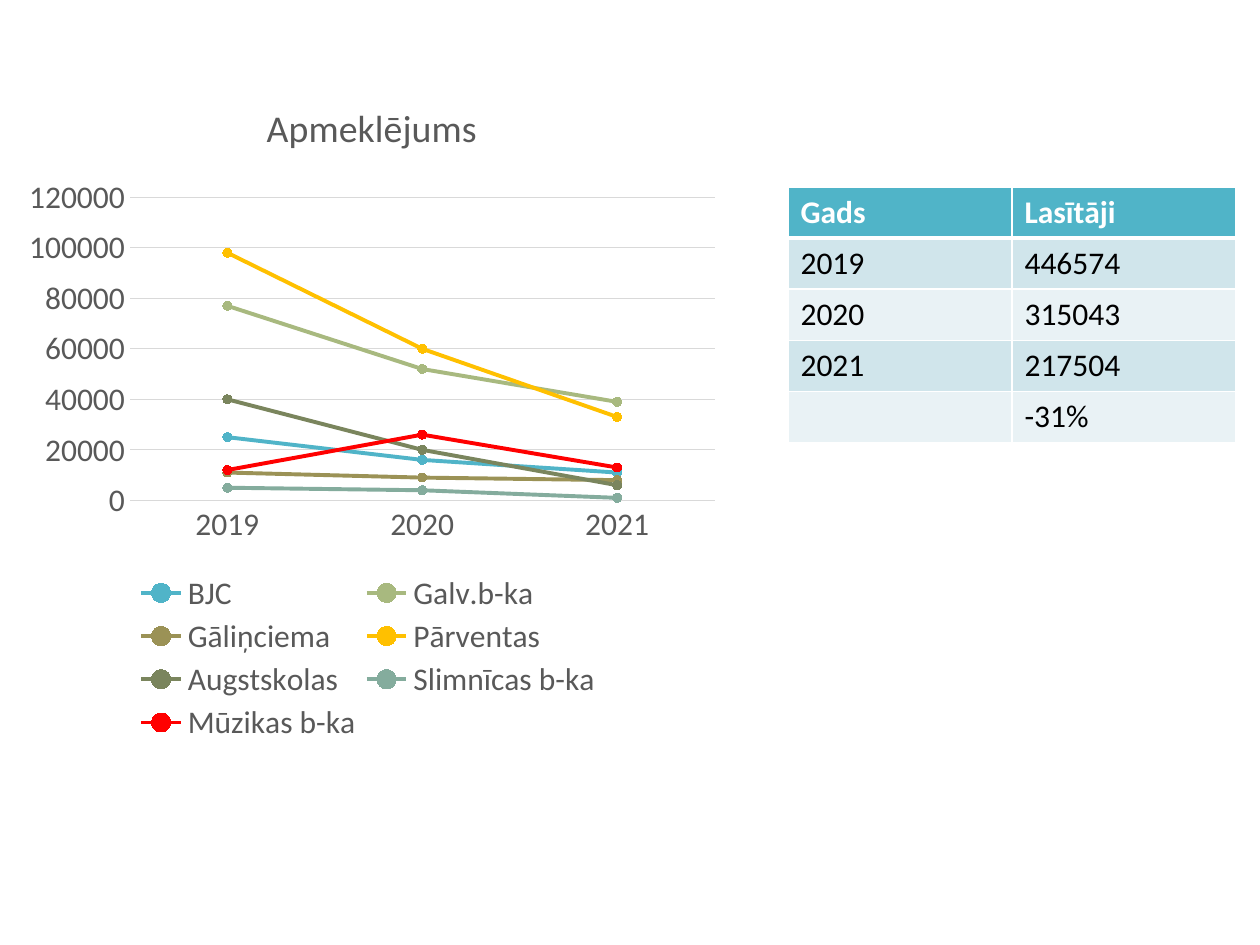
import pptx
import pptx.util
import pptx.chart.data
import pptx.dml.color
import pptx.enum.chart
import pptx.oxml
import pptx.oxml.ns

RGB = pptx.dml.color.RGBColor
WHITE = RGB(0xFF, 0xFF, 0xFF)
BLACK = RGB(0, 0, 0)
GREY = RGB(0x59, 0x59, 0x59)
GRID = RGB(0xD9, 0xD9, 0xD9)
TEAL = RGB(0x50, 0xB4, 0xC8)
BANDS = [RGB(0xD0, 0xE5, 0xEB), RGB(0xE9, 0xF2, 0xF5)]
FONT = "Calibri"

READERS = [
    ("Gads", "Lasītāji"),
    ("2019", "446574"),
    ("2020", "315043"),
    ("2021", "217504"),
    ("", "-31%"),
]
YEARS = ["2019", "2020", "2021"]
VISITS = [
    ("BJC", (25000, 16000, 11000), TEAL),
    ("Galv.b-ka", (77000, 52000, 39000), RGB(0xA8, 0xB9, 0x7F)),
    ("Gāliņciema", (11000, 9000, 8000), RGB(0x9B, 0x92, 0x56)),
    ("Pārventas", (98000, 60000, 33000), RGB(0xFF, 0xC0, 0x00)),
    ("Augstskolas", (40000, 20000, 6000), RGB(0x7A, 0x85, 0x5D)),
    ("Slimnīcas b-ka", (5000, 4000, 1000), RGB(0x84, 0xAC, 0x9D)),
    ("Mūzikas b-ka", (12000, 26000, 13000), RGB(0xFF, 0x00, 0x00)),
]

CHART_BOX = (15, 74, 714, 677)
PLOT_BOX = (130, 197, 585, 303)
LEGEND_BOX = (130, 569, 476, 178)
TABLE_BOX = (788, 187, 448, 255)


def px(length):
    return pptx.util.Emu(round(length * 914400 / 126))


def write(frame, text, size=18, color=BLACK, bold=False):
    run = frame.paragraphs[0].add_run()
    run.text = text
    run.font.name = FONT
    run.font.size = pptx.util.Pt(size)
    run.font.bold = bold
    run.font.color.rgb = color


def draw_borders(cell, bottom):
    properties = cell._tc.get_or_add_tcPr()
    for index, (side, width) in enumerate([("L", 1), ("R", 1), ("T", 1), ("B", bottom)]):
        border = pptx.oxml.parse_xml(
            f'<a:ln{side} {pptx.oxml.ns.nsdecls("a")} w="{pptx.util.Pt(width)}">'
            f'<a:solidFill><a:srgbClr val="{WHITE}"/></a:solidFill></a:ln{side}>')
        properties.insert(index, border)


def manual_layout(box, target=""):
    left, top, width, height = CHART_BOX
    shares = {"x": (box[0] - left) / width, "y": (box[1] - top) / height,
              "w": box[2] / width, "h": box[3] / height}
    values = "".join(f'<c:{key} val="{share:.3f}"/>' for key, share in shares.items())
    return pptx.oxml.parse_xml(
        f'<c:layout {pptx.oxml.ns.nsdecls("c")}><c:manualLayout>{target}'
        f'<c:xMode val="edge"/><c:yMode val="edge"/>{values}</c:manualLayout></c:layout>')


def add_visits(slide):
    data = pptx.chart.data.CategoryChartData()
    data.categories = YEARS
    for name, values, color in VISITS:
        data.add_series(name, values)
    chart = slide.shapes.add_chart(
        pptx.enum.chart.XL_CHART_TYPE.LINE_MARKERS, *map(px, CHART_BOX), data).chart
    chart.font.name = FONT
    chart.font.size = pptx.util.Pt(18)
    chart.font.color.rgb = GREY
    chart.has_title = True
    write(chart.chart_title.text_frame, "Apmeklējums", size=21.6, color=GREY)

    for axis in (chart.category_axis, chart.value_axis):
        axis.major_tick_mark = pptx.enum.chart.XL_TICK_MARK.NONE
        axis.minor_tick_mark = pptx.enum.chart.XL_TICK_MARK.NONE
    chart.value_axis.format.line.fill.background()
    chart.value_axis.minimum_scale = 0
    chart.value_axis.maximum_scale = 120000
    chart.value_axis.major_unit = 20000
    for line in (chart.category_axis.format.line,
                 chart.value_axis.major_gridlines.format.line):
        line.color.rgb = GRID
        line.width = pptx.util.Pt(0.75)

    for series, (name, values, color) in zip(chart.plots[0].series, VISITS):
        series.smooth = False
        series.format.line.color.rgb = color
        series.format.line.width = pptx.util.Pt(2.25)
        series.marker.style = pptx.enum.chart.XL_MARKER_STYLE.CIRCLE
        series.marker.size = 5
        series.marker.format.fill.solid()
        series.marker.format.fill.fore_color.rgb = color
        series.marker.format.line.color.rgb = color

    chart.has_legend = True
    chart.legend.position = pptx.enum.chart.XL_LEGEND_POSITION.BOTTOM
    chart.legend.include_in_layout = False
    plot_area = chart._chartSpace.chart.plotArea
    for part, place, layout in (
            (plot_area, 0, manual_layout(PLOT_BOX, '<c:layoutTarget val="inner"/>')),
            (chart.legend._element, 1, manual_layout(LEGEND_BOX))):
        for automatic in part.findall(pptx.oxml.ns.qn("c:layout")):
            part.remove(automatic)
        part.insert(place, layout)


def add_readers(slide):
    table = slide.shapes.add_table(
        len(READERS), len(READERS[0]), *map(px, TABLE_BOX)).table
    for row, entries in enumerate(READERS):
        header = row == 0
        for column, entry in enumerate(entries):
            cell = table.cell(row, column)
            cell.fill.solid()
            cell.fill.fore_color.rgb = TEAL if header else BANDS[(row - 1) % 2]
            draw_borders(cell, bottom=3 if header else 1)
            if entry:
                write(cell.text_frame, entry, color=WHITE if header else BLACK, bold=header)


def main():
    deck = pptx.Presentation()
    deck.slide_width = px(1260)
    deck.slide_height = px(945)
    slide = deck.slides.add_slide(deck.slide_layouts[6])
    add_readers(slide)
    add_visits(slide)
    deck.save("out.pptx")


if __name__ == "__main__":
    main()
